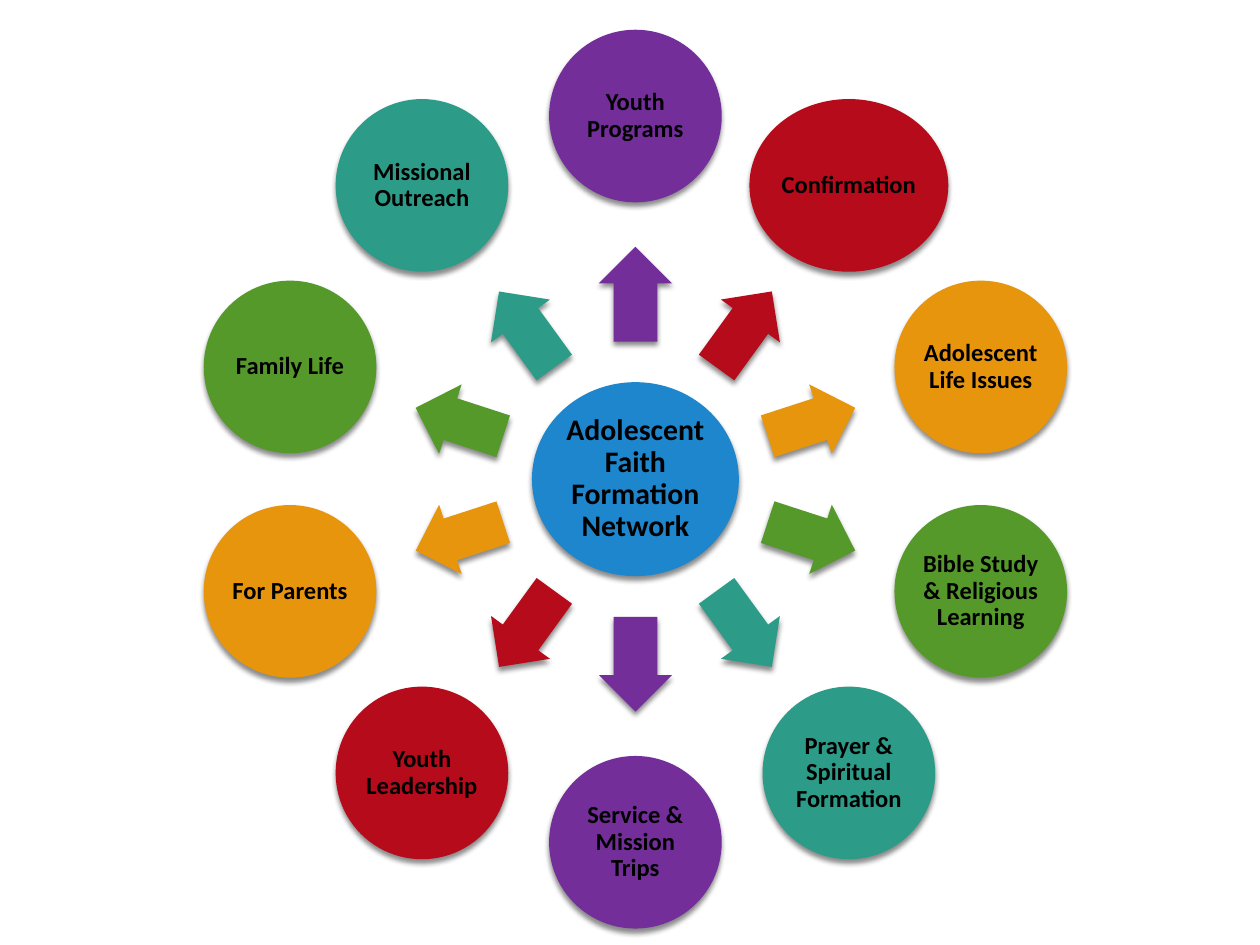
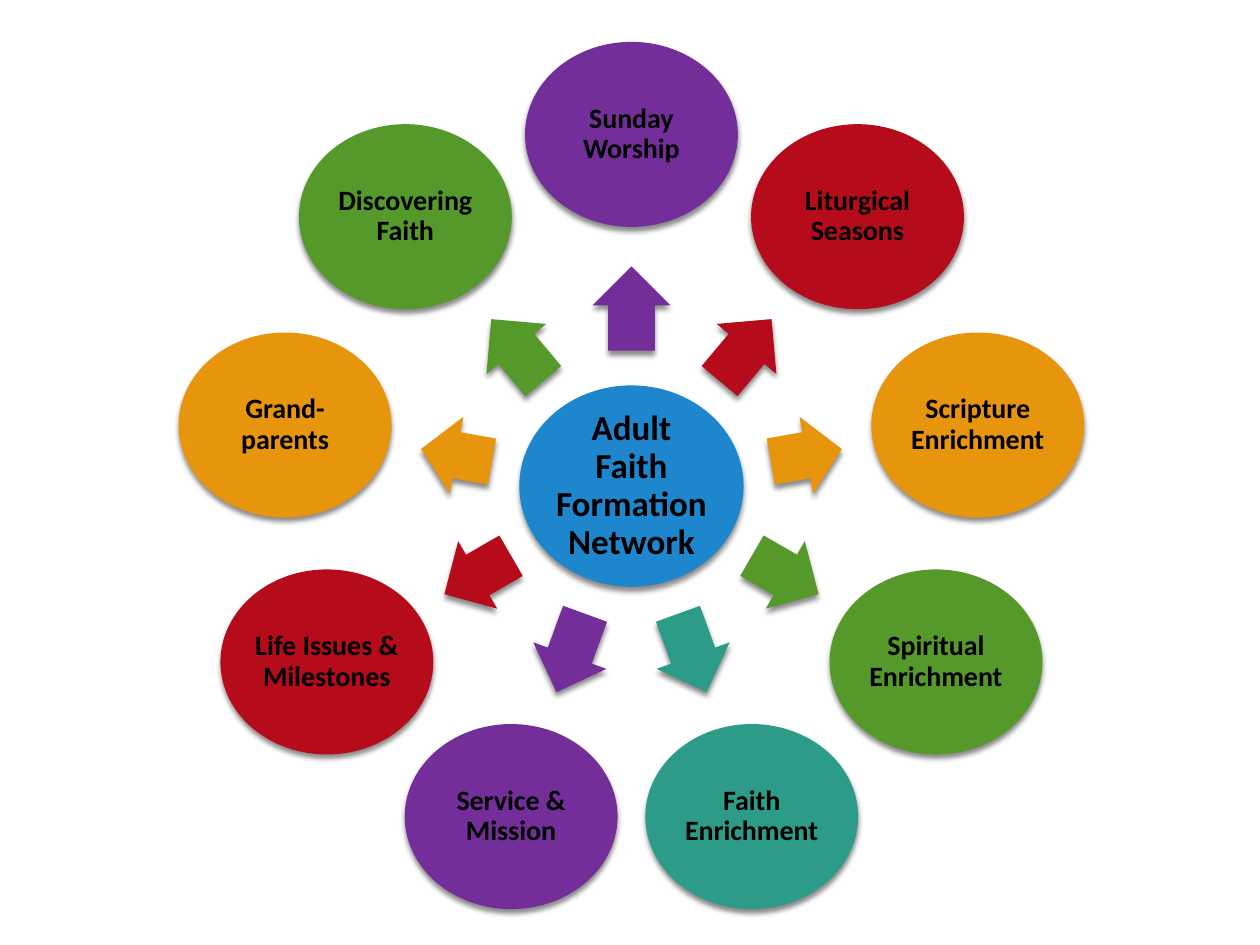
from itertools import cycle
from math import cos, radians, sin

from lxml import etree
from pptx import Presentation
from pptx.dml.color import RGBColor
from pptx.enum.shapes import MSO_SHAPE
from pptx.enum.text import MSO_ANCHOR, PP_ALIGN
from pptx.oxml.ns import qn
from pptx.util import Cm, Pt

OVAL = MSO_SHAPE.OVAL
RIGHT_ARROW = MSO_SHAPE.RIGHT_ARROW
MIDDLE = MSO_ANCHOR.MIDDLE
CENTER = PP_ALIGN.CENTER

FONT = "Calibri"
TEXT_COLOR = "000000"
HUB_COLOR = "1D86CD"
SPOKE_COLORS = ["732E9A", "B50B1B", "E8950E", "55992B", "2C9C89"]
TEXT_INSET = 0.05

NETWORKS = [
    {
        "hub": "Adolescent Faith Formation Network",
        "topics": [
            "Youth Programs", "Confirmation", "Adolescent Life Issues",
            "Bible Study & Religious Learning", "Prayer & Spiritual Formation",
            "Service & Mission Trips", "Youth Leadership", "For Parents",
            "Family Life", "Missional Outreach",
        ],
        "center": (12.81, 9.66),
        "hub_size": (4.17, 3.91),
        "topic_size": (3.48, 3.48),
        "wide_topics": {"Confirmation": 4.01},
        "topic_radius": 7.32,
        "arrow_radius": 3.73,
        "arrow_breadth": 1.47,
        "arrow_length": (1.83, 0.08),
        "hub_pt": 17,
        "topic_pt": 14,
    },
    {
        "hub": "Adult Faith Formation Network",
        "topics": [
            "Sunday Worship", "Liturgical Seasons", "Scripture Enrichment",
            "Spiritual Enrichment", "Faith Enrichment", "Service & Mission",
            "Life Issues & Milestones", "Grand-parents", "Discovering Faith",
        ],
        "center": (12.73, 9.8),
        "hub_size": (4.52, 4.06),
        "topic_size": (4.29, 3.73),
        "wide_topics": {},
        "topic_radius": 7.09,
        "arrow_radius": 3.58,
        "arrow_breadth": 1.57,
        "arrow_length": (1.4, 0.3),
        "hub_pt": 20,
        "topic_pt": 16,
    },
]


def rgb(color):
    return RGBColor.from_string(color)


def add_soft_shadow(shape):
    shape.shadow.inherit = False
    effects = shape._element.spPr.find(qn("a:effectLst"))
    shadow = etree.SubElement(
        effects, qn("a:outerShdw"), blurRad=str(Pt(3)), dist=str(Pt(2.4)),
        dir="5400000", rotWithShape="0")
    black = etree.SubElement(shadow, qn("a:srgbClr"), val="000000")
    etree.SubElement(black, qn("a:alpha"), val="45000")


def add_filled(slide, preset, center, size, color):
    (x, y), (width, height) = center, size
    shape = slide.shapes.add_shape(
        preset, Cm(x - width / 2), Cm(y - height / 2), Cm(width), Cm(height))
    shape.fill.solid()
    shape.fill.fore_color.rgb = rgb(color)
    shape.line.fill.background()
    add_soft_shadow(shape)
    return shape


def add_bubble(slide, center, size, color, label, points):
    frame = add_filled(slide, OVAL, center, size, color).text_frame
    frame.word_wrap = True
    frame.vertical_anchor = MIDDLE
    frame.margin_left = frame.margin_right = Cm(TEXT_INSET)
    frame.margin_top = frame.margin_bottom = Cm(TEXT_INSET)
    paragraph = frame.paragraphs[0]
    paragraph.alignment = CENTER
    paragraph.line_spacing = 0.9
    run = paragraph.add_run()
    run.text = label
    run.font.name = FONT
    run.font.size = Pt(points)
    run.font.bold = True
    run.font.color.rgb = rgb(TEXT_COLOR)


def add_arrow(slide, center, size, color, angle):
    arrow = add_filled(slide, RIGHT_ARROW, center, size, color)
    arrow.adjustments[0] = 0.6
    arrow.adjustments[1] = 0.5
    arrow.rotation = angle % 360


def around(center, radius, angle):
    return (center[0] + radius * cos(radians(angle)),
            center[1] + radius * sin(radians(angle)))


def draw_network(slide, network):
    center = network["center"]
    add_bubble(slide, center, network["hub_size"], HUB_COLOR,
               network["hub"], network["hub_pt"])
    topics = network["topics"]
    base_length, upright_extra = network["arrow_length"]
    topic_width, topic_height = network["topic_size"]
    for index, (topic, color) in enumerate(zip(topics, cycle(SPOKE_COLORS))):
        angle = index * 360 / len(topics) - 90
        arrow_length = base_length + upright_extra * abs(sin(radians(angle)))
        add_arrow(slide, around(center, network["arrow_radius"], angle),
                  (arrow_length, network["arrow_breadth"]), color, angle)
        width = network["wide_topics"].get(topic, topic_width)
        add_bubble(slide, around(center, network["topic_radius"], angle),
                   (width, topic_height), color, topic, network["topic_pt"])


def main():
    deck = Presentation()
    deck.slide_width, deck.slide_height = Cm(25.4), Cm(19.05)
    for network in NETWORKS:
        draw_network(deck.slides.add_slide(deck.slide_layouts[6]), network)
    deck.save("out.pptx")


if __name__ == "__main__":
    main()
